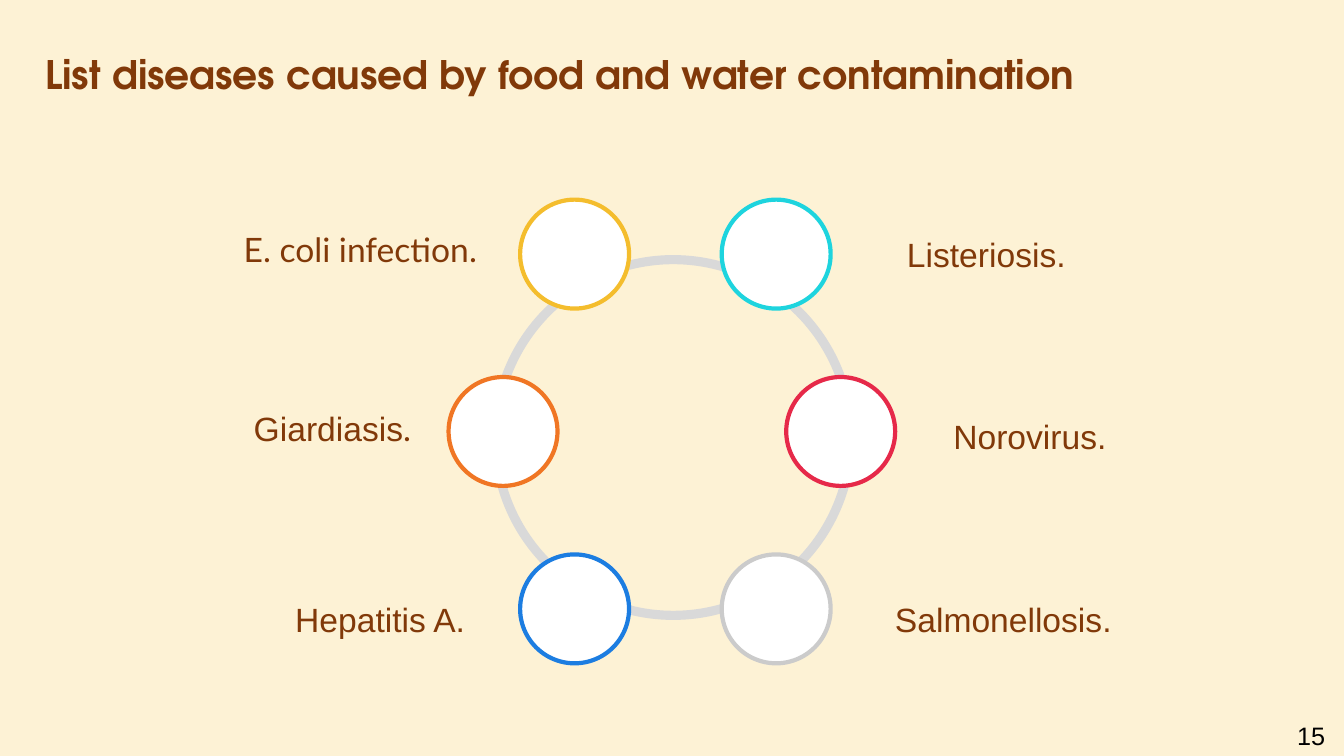
from dataclasses import dataclass

from pptx import Presentation
from pptx.dml.color import RGBColor
from pptx.enum.shapes import MSO_SHAPE
from pptx.enum.text import MSO_ANCHOR, MSO_AUTO_SIZE, PP_ALIGN
from pptx.util import Pt

DONUT, OVAL = MSO_SHAPE.DONUT, MSO_SHAPE.OVAL
MIDDLE, LEFT = MSO_ANCHOR.MIDDLE, PP_ALIGN.LEFT
NO_FIT, GROW = MSO_AUTO_SIZE.NONE, MSO_AUTO_SIZE.SHAPE_TO_FIT_TEXT

TITLE = "List diseases caused by food and water contamination"
PAGE = "15"
DISEASES = [
    {"row": 0, "side": 0, "color": "F4BD2D", "at": (167, 159.8), "runs": [("E. coli infection.", "Lato")]},
    {"row": 0, "side": 1, "color": "1ED4DE", "at": (640.8, 163.4), "runs": [("Listeriosis.", "Arial")]},
    {"row": 1, "side": 0, "color": "F07624", "at": (174.2, 288), "runs": [("Giardiasis", "Arial"), (".", "Lato")]},
    {"row": 1, "side": 1, "color": "E62949", "at": (673.9, 293.8), "runs": [("Norovirus.", "Arial")]},
    {"row": 2, "side": 0, "color": "1C7DE1", "at": (203.8, 424.1), "runs": [("Hepatitis A.", "Arial")]},
    {"row": 2, "side": 1, "color": "CBCBCB", "at": (632.2, 424.1), "runs": [("Salmonellosis.", "Arial")]},
]


@dataclass(frozen=True)
class Theme:
    background: str = "FDF2D5"
    text: str = "813909"
    page: str = "000000"
    ring: str = "D9D9D9"
    circle: str = "FFFFFF"
    title_font: str = "TeX Gyre Adventor"
    body_font: str = "Arial"
    title_size: int = 28
    label_size: int = 24
    page_size: int = 18


THEME = Theme()
CIRCLE = 77.8
ROW_TOP, ROW_PITCH = 142.6, 126.7
OUTER_LEFTS, MIDDLE_LEFTS = (371.5, 515.5), (320.4, 561.6)
LABEL_SIZE = (206.6, 36)


def paint(fill, color):
    fill.solid()
    fill.fore_color.rgb = RGBColor.from_string(color)


def add_run(p, text, name, size, color, bold=False):
    r = p.add_run()
    r.text = text
    for key, value in {"name": name, "size": Pt(size), "bold": bold}.items():
        setattr(r.font, key, value)
    r.font.color.rgb = RGBColor.from_string(color)


def add_text(s, box, runs, size, color):
    tf = s.shapes.add_textbox(*map(Pt, box)).text_frame
    tf.word_wrap = True
    tf.auto_size = GROW
    for text, name in runs:
        add_run(tf.paragraphs[0], text, name, size, color)


def add_round(group, kind, box, color):
    sp = group.shapes.add_shape(kind, *map(Pt, box))
    sp.shadow.inherit = False
    paint(sp.fill, color)
    return sp


def add_title(s):
    sp = s.shapes.title
    sp.left, sp.top, sp.width, sp.height = map(Pt, (25.2, 26.6, 911.5, 56.9))
    paint(sp.fill, THEME.background)
    tf = sp.text_frame
    for key, value in {"vertical_anchor": MIDDLE, "word_wrap": True, "auto_size": NO_FIT}.items():
        setattr(tf, key, value)
    p = tf.paragraphs[0]
    p.alignment = LEFT
    p.line_spacing = 0.9
    add_run(p, TITLE, THEME.title_font, THEME.title_size, THEME.text, True)


def add_wheel(s):
    wheel = s.shapes.add_group_shape()
    ring = add_round(wheel, DONUT, (350.6, 182.2, 260.6, 260.6), THEME.ring)
    ring.adjustments[0] = 0.025
    ring.line.fill.background()
    for disease in DISEASES:
        row = disease["row"]
        lefts = MIDDLE_LEFTS if row == 1 else OUTER_LEFTS
        box = (lefts[disease["side"]], ROW_TOP + row * ROW_PITCH, CIRCLE, CIRCLE)
        sp = add_round(wheel, OVAL, box, THEME.circle)
        paint(sp.line.fill, disease["color"])
        sp.line.width = Pt(3)


def main():
    prs = Presentation()
    prs.slide_width, prs.slide_height = Pt(960), Pt(540)
    s = prs.slides.add_slide(prs.slide_layouts[5])
    paint(s.background.fill, THEME.background)
    add_title(s)
    add_wheel(s)
    for disease in DISEASES:
        add_text(s, disease["at"] + LABEL_SIZE, disease["runs"], THEME.label_size, THEME.text)
    add_text(s, (919.4, 511.2, 40.3, 28.8), [(PAGE, THEME.body_font)], THEME.page_size, THEME.page)
    prs.save("out.pptx")


if __name__ == "__main__":
    main()
